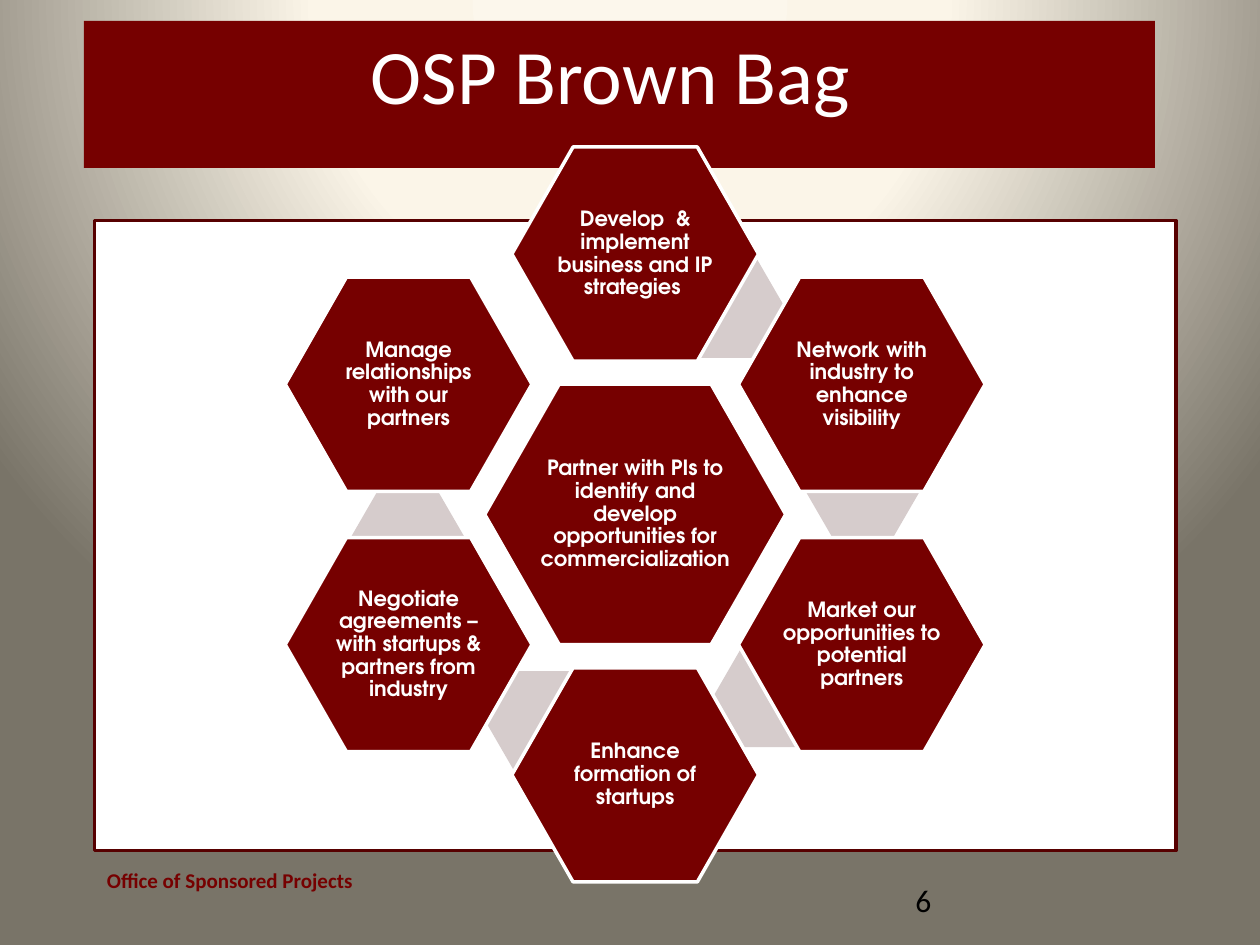
import pptx
import pptx.dml.color
import pptx.enum.shapes
import pptx.enum.text
import pptx.oxml
import pptx.oxml.ns
import pptx.util

Pt = pptx.util.Pt
SHAPES = pptx.enum.shapes.MSO_SHAPE
ALIGN = pptx.enum.text.PP_ALIGN
ANCHOR = pptx.enum.text.MSO_ANCHOR

COLORS = {
    "maroon": "760000",
    "border": "570000",
    "white": "FFFFFF",
    "black": "000000",
    "link": "D6CCCC",
}
BACKDROP_STOPS = [(0, "FCF7EC"), (40, "FBF5E8"), (100, "797468")]

CORE_TEXT = "Partner with PIs to identify and develop opportunities for commercialization"
CORE_SIZE = (172, 149)
RING_SIZE = (141, 122.4)
LINK_SIZE = (65, 56)
COLUMN_STEP = 129.5
ROW_STEP = 74.4
RING = [
    ("Develop  & implement business and IP strategies ", (0, -2), (53.5, -117.5)),
    ("Network with industry to enhance visibility", (1, -1), (130, -13)),
    ("Market our opportunities to potential partners", (1, 1), (76.5, 105)),
    ("Enhance formation of startups", (0, 2), (-53.5, 117.5)),
    ("Negotiate agreements – with startups & partners from industry", (-1, 1), (-130, 13)),
    ("Manage relationships with our partners", (-1, -1), None),
]


def rgb(name):
    """Return the named palette colour."""
    return pptx.dml.color.RGBColor.from_string(COLORS[name])


def write(shape, text, size=12, font="Calibri", color="white", bold=False,
          align=ALIGN.LEFT, anchor=ANCHOR.TOP, spacing=1.0, inset=None):
    """Put formatted text into a shape."""
    frame = shape.text_frame
    frame.word_wrap = True
    frame.auto_size = pptx.enum.text.MSO_AUTO_SIZE.NONE
    frame.vertical_anchor = anchor
    if inset is not None:
        frame.margin_left = frame.margin_right = Pt(inset)
        frame.margin_top = frame.margin_bottom = Pt(inset)
    paragraph = frame.paragraphs[0]
    paragraph.alignment = align
    paragraph.line_spacing = spacing
    paragraph.space_before = Pt(0)
    run = paragraph.add_run()
    run.text = text
    run.font.name = font
    run.font.size = Pt(size)
    run.font.bold = bold
    run.font.color.rgb = rgb(color)


def add_block(slide, kind, box, fill, line=None):
    """Add a filled preset shape with an optional outline."""
    block = slide.shapes.add_shape(kind, *map(Pt, box))
    block.shadow.inherit = False
    block.fill.solid()
    block.fill.fore_color.rgb = rgb(fill)
    if line:
        block.line.color.rgb = rgb(line)
        block.line.width = Pt(2)
    else:
        block.line.fill.background()
    return block


def add_hexagon(slide, center, size, fill, line=None, text=None):
    """Add a hexagon around a centre point, with text if given."""
    (x, y), (width, height) = center, size
    box = (x - width / 2, y - height / 2, width, height)
    hexagon = add_block(slide, SHAPES.HEXAGON, box, fill, line)
    hexagon.adjustments[0] = 0.286 if text else 0.289
    if text:
        write(hexagon, text, font="TeX Gyre Adventor", bold=True, spacing=0.9,
              align=ALIGN.CENTER, anchor=ANCHOR.MIDDLE, inset=1.2)


def set_backdrop(slide):
    """Fill the background with a circular gradient."""
    slide.background.fill.gradient()
    gradient = slide.element.find(".//" + pptx.oxml.ns.qn("a:gradFill"))
    stops = "".join(
        f'<a:gs pos="{position * 1000}"><a:srgbClr val="{color}"/></a:gs>'
        for position, color in BACKDROP_STOPS
    )
    replacement = pptx.oxml.parse_xml(
        f'<a:gradFill {pptx.oxml.ns.nsdecls("a")} rotWithShape="1">'
        f'<a:gsLst>{stops}</a:gsLst><a:path path="circle">'
        '<a:fillToRect l="50000" t="-80000" r="50000" b="180000"/>'
        "</a:path></a:gradFill>"
    )
    gradient.getparent().replace(gradient, replacement)


def place_title(slide, box):
    """Format the title placeholder as a banner."""
    title = slide.shapes.title
    title.left, title.top, title.width, title.height = map(Pt, box)
    title.fill.solid()
    title.fill.fore_color.rgb = rgb("maroon")
    write(title, "OSP Brown Bag ", size=44, align=ALIGN.CENTER)


def place_diagram(slide, box):
    """Draw the panel and the ring of hexagons around its core."""
    left, top, width, height = box
    add_block(slide, SHAPES.RECTANGLE, box, "white", "border")
    core_x, core_y = left + width / 2, top + height / 2 - 12
    add_hexagon(slide, (core_x, core_y), CORE_SIZE, "maroon", "white", CORE_TEXT)
    for text, (column, row), link in RING:
        if link:
            add_hexagon(slide, (core_x + link[0], core_y + link[1]), LINK_SIZE, "link")
        center = (core_x + column * COLUMN_STEP, core_y + row * ROW_STEP)
        add_hexagon(slide, center, RING_SIZE, "maroon", "white", text)


def place_footer(slide, box):
    """Write the office name and the page number."""
    left, top, width, height = box
    office = slide.shapes.add_textbox(Pt(left), Pt(top), Pt(228), Pt(22))
    write(office, "Office of Sponsored Projects", color="maroon", bold=True)
    number = slide.shapes.add_textbox(
        Pt(left + width - 168), Pt(top + height - 29), Pt(168), Pt(29))
    write(number, "6", size=18, color="black")


def main():
    """Build and save the slide."""
    deck = pptx.Presentation()
    deck.slide_width, deck.slide_height = Pt(720), Pt(540)
    slide = deck.slides.add_slide(deck.slide_layouts[5])
    set_backdrop(slide)
    place_title(slide, (48, 12, 612, 84))
    place_diagram(slide, (54, 126, 618, 360))
    place_footer(slide, (54, 492, 630, 37))
    deck.save("out.pptx")


if __name__ == "__main__":
    main()
